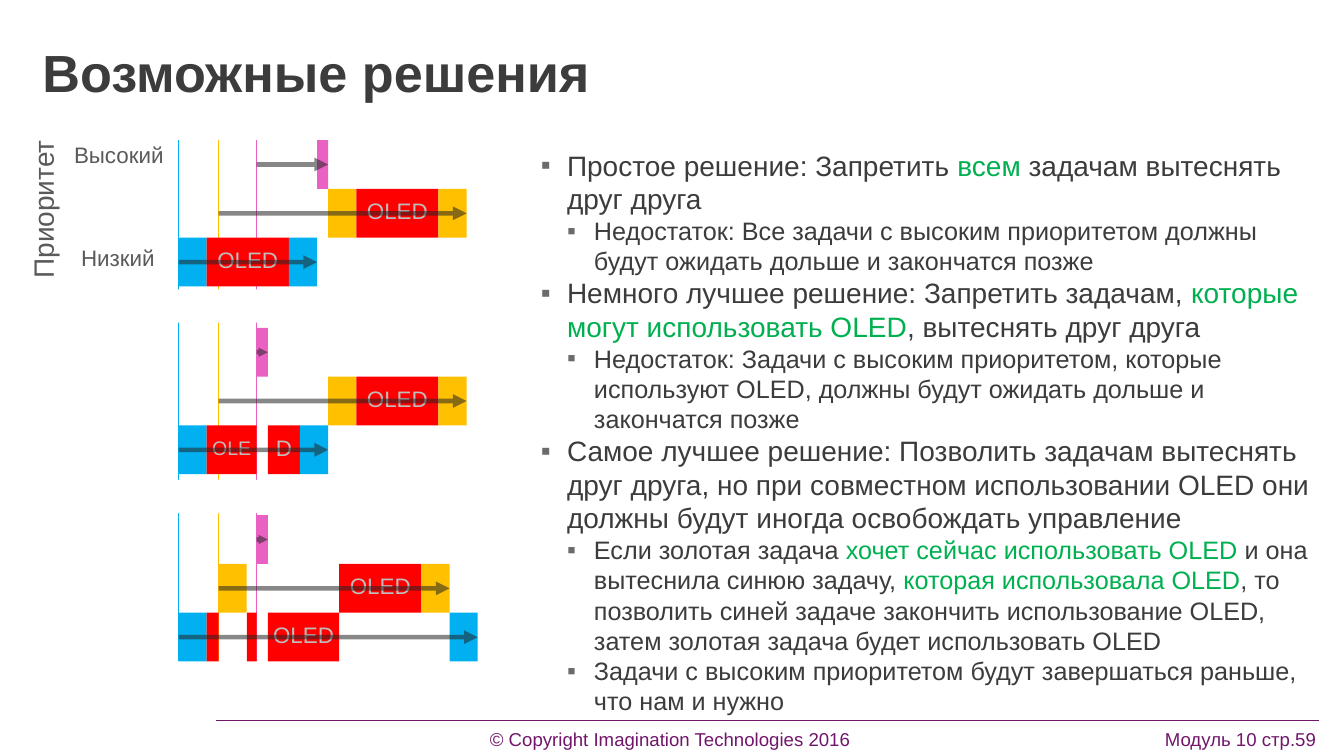
from lxml import etree
from pptx import Presentation
from pptx.dml.color import RGBColor
from pptx.enum.shapes import MSO_CONNECTOR, MSO_SHAPE
from pptx.enum.text import MSO_ANCHOR, PP_ALIGN
from pptx.oxml.ns import qn
from pptx.util import Cm, Pt

STRAIGHT = MSO_CONNECTOR.STRAIGHT
RECTANGLE = MSO_SHAPE.RECTANGLE
LEFT, CENTER = PP_ALIGN.LEFT, PP_ALIGN.CENTER
MIDDLE = MSO_ANCHOR.MIDDLE
LEFT_SIDE, RIGHT_SIDE = 1, 3

FONT = "Arial"
BLUE, GOLD, PINK, RED = "00B0F0", "FFC000", "E961C3", "FF0000"
DARK, GREY, GREEN, PURPLE, WHITE = "3C3C3C", "5A5A5A", "00B050", "72166B", "FFFFFF"

ROW = 1.23
ARRIVALS = {BLUE: 4.5, GOLD: 5.51, PINK: 6.47}
PRIORITIES = [PINK, GOLD, BLUE]
EDGE, OLED, SHORT = 0.71, 2.07, 0.28

# Each step is the running task, its duration, its fill and its label;
# one step starts where the step before it ends.
GOLD_RUN = [(GOLD, EDGE, GOLD, ""), (GOLD, OLED, RED, "OLED"), (GOLD, EDGE, GOLD, "")]
PINK_RUN = (PINK, SHORT, PINK, "")
BLUE_EDGE = (BLUE, EDGE, BLUE, "")
SCHEDULES = [
    (3.53, [BLUE_EDGE, (BLUE, OLED, RED, "OLED"), BLUE_EDGE, PINK_RUN, *GOLD_RUN]),
    (8.26, [BLUE_EDGE, (BLUE, 1.26, RED, "OLE"), PINK_RUN, (BLUE, 0.81, RED, "D"),
            BLUE_EDGE, *GOLD_RUN]),
    (12.98, [BLUE_EDGE, (BLUE, 0.3, RED, ""), GOLD_RUN[0], (BLUE, 0.25, RED, ""),
             PINK_RUN, (BLUE, 1.8, RED, "OLED"), *GOLD_RUN[1:], BLUE_EDGE]),
]

# Level and text; the parts between bars are green.
SOLUTIONS = [
    (0, "Простое решение: Запретить |всем| задачам вытеснять друг друга"),
    (1, "Недостаток: Все задачи с высоким приоритетом должны будут ожидать "
        "дольше и закончатся позже"),
    (0, "Немного лучшее решение: Запретить задачам,| которые могут использовать "
        "OLED|, вытеснять друг друга"),
    (1, "Недостаток: Задачи с высоким приоритетом, которые используют OLED, "
        "должны будут ожидать дольше и закончатся позже"),
    (0, "Самое лучшее решение: Позволить задачам вытеснять друг друга, но при "
        "совместном использовании OLED они должны будут иногда освобождать управление"),
    (1, "Если золотая задача| хочет сейчас использовать OLED| и она вытеснила синюю "
        "задачу, |которая использовала OLED|, то позволить синей задаче закончить "
        "использование OLED, затем золотая задача будет использовать OLED"),
    (1, "Задачи с высоким приоритетом будут завершаться раньше, что нам и нужно"),
]
LEVELS = [{"size": 20, "margin": 0.66, "hanging": 0.66},
          {"size": 18, "margin": 1.34, "hanging": 0.68}]


def rgb(value):
    return RGBColor.from_string(value)


def apply_format(target, values):
    for name, value in values.items():
        setattr(target, name, value)


def add_run(paragraph, text, size, color, bold=False):
    run = paragraph.add_run()
    run.text = text
    apply_format(run.font, {"name": FONT, "size": Pt(size), "bold": bold})
    run.font.color.rgb = rgb(color)


def add_text_box(slide, left, top, width, height, inset=(0, 0), wrap=True):
    box = slide.shapes.add_textbox(Cm(left), Cm(top), Cm(width), Cm(height))
    across, down = (Cm(value) for value in inset)
    apply_format(box.text_frame, {
        "margin_left": across, "margin_right": across,
        "margin_top": down, "margin_bottom": down, "word_wrap": wrap})
    return box


def add_line(slide, start, end, color, width):
    line = slide.shapes.add_connector(STRAIGHT, *(Cm(value) for value in (*start, *end)))
    line.line.color.rgb = rgb(color)
    line.line.width = Pt(width)
    etree.SubElement(line._element.spPr, qn("a:effectLst"))
    return line


def add_bar(slide, left, top, width, height, color, label=""):
    bar = slide.shapes.add_shape(RECTANGLE, Cm(left), Cm(top), Cm(width), Cm(height))
    bar.shadow.inherit = False
    bar.fill.solid()
    bar.fill.fore_color.rgb = rgb(color)
    bar.line.fill.background()
    if label:
        apply_format(bar.text_frame, {"margin_left": 0, "margin_right": 0,
                                      "vertical_anchor": MIDDLE})
        paragraph = bar.text_frame.paragraphs[0]
        apply_format(paragraph, {"alignment": CENTER, "line_spacing": 0.8})
        add_run(paragraph, label, 14 if label == "OLE" else 16, "BEBEBE")
    return bar


def add_schedule(slide, top, steps):
    """Draw the bars of one schedule and return them by task."""
    bars = {task: [] for task in PRIORITIES}
    time = ARRIVALS[BLUE]
    for task, duration, color, label in steps:
        row_top = top + ROW * PRIORITIES.index(task)
        bars[task].append(add_bar(slide, time, row_top, duration, ROW, color, label))
        time += duration
    return bars


def add_response_arrow(slide, task, bars):
    """Draw a translucent arrow from a task's arrival to its completion."""
    first, last = bars[0], bars[-1]
    middle = (first.top + first.height / 2) / Cm(1)
    arrival = ARRIVALS[task]
    finish = (last.left + last.width) / Cm(1)
    arrow = add_line(slide, (arrival, middle), (finish, middle), "262626", 3.25)
    arrow.end_connect(last, RIGHT_SIDE)
    arrow.begin_y = arrow.end_y
    if abs(first.left / Cm(1) - arrival) < 0.01:
        arrow.begin_connect(first, LEFT_SIDE)
    outline = arrow.line._get_or_add_ln()
    etree.SubElement(outline.find(".//" + qn("a:srgbClr")), qn("a:alpha"), val="54000")
    head_size = "sm" if finish - arrival < 0.5 else "med"
    etree.SubElement(outline, qn("a:tailEnd"), type="triangle", w=head_size, len=head_size)


def add_label(slide, left, top, width, height, text, size, alignment=CENTER, rotation=0):
    box = add_text_box(slide, left, top, width, height, inset=(0.23, 0.11))
    box.rotation = rotation
    paragraph = box.text_frame.paragraphs[0]
    paragraph.alignment = alignment
    add_run(paragraph, text, size, GREY)


def add_title(slide, text):
    box = add_text_box(slide, 1.07, 1.26, 32.2, 1.19, wrap=False)
    paragraph = box.text_frame.paragraphs[0]
    paragraph.line_spacing = 0.85
    add_run(paragraph, text, 37.3, DARK, bold=True)


def add_bullet(paragraph, margin, hanging):
    properties = paragraph._p.get_or_add_pPr()
    properties.set("marL", str(Cm(margin)))
    properties.set("indent", str(-Cm(hanging)))
    color = etree.SubElement(properties, qn("a:buClr"))
    etree.SubElement(color, qn("a:srgbClr"), val="6B6B6B")
    etree.SubElement(properties, qn("a:buFont"), typeface=FONT)
    etree.SubElement(properties, qn("a:buChar"), char="▪")


def add_solutions(slide):
    frame = add_text_box(slide, 13.63, 3.73, 19.46, 14.4).text_frame
    for index, (level, text) in enumerate(SOLUTIONS):
        paragraph = frame.add_paragraph() if index else frame.paragraphs[0]
        style = LEVELS[level]
        add_bullet(paragraph, style["margin"], style["hanging"])
        apply_format(paragraph, {"level": level, "line_spacing": 1.0})
        for part, words in enumerate(text.split("|")):
            add_run(paragraph, words, style["size"], GREEN if part % 2 else DARK)


def add_footer(slide, center_text, right_text):
    add_line(slide, (5.44, 18.16), (33.25, 18.16), PURPLE, 0.5)
    box = add_text_box(slide, 0.61, 18.4, 32.66, 0.51)
    paragraph = box.text_frame.paragraphs[0]
    tabs = etree.SubElement(paragraph._p.get_or_add_pPr(), qn("a:tabLst"))
    for position, alignment in ((16.28, "ctr"), (32.56, "r")):
        etree.SubElement(tabs, qn("a:tab"), pos=str(Cm(position)), algn=alignment)
    paragraph.line_spacing = 0.9
    add_run(paragraph, f"\t{center_text}\t{right_text}", 13.3, PURPLE)


def main():
    presentation = Presentation()
    presentation.slide_width, presentation.slide_height = Cm(33.87), Cm(19.05)
    slide = presentation.slides.add_slide(presentation.slide_layouts[6])

    add_footer(slide, "© Copyright Imagination Technologies 2016", "Модуль 10 стр.59")
    add_title(slide, "Возможные решения")
    add_solutions(slide)

    for color, arrival in ARRIVALS.items():
        add_line(slide, (arrival, 16.66), (arrival, 3.53), color, 1)
    schedules = [add_schedule(slide, top, steps) for top, steps in SCHEDULES]
    for gap_top in (7.29, 12.09):
        add_bar(slide, 4.3, gap_top, 3.81, 0.84, WHITE)
    for bars in schedules:
        for task in PRIORITIES:
            add_response_arrow(slide, task, bars[task])

    add_label(slide, -0.97, 4.67, 4.09, 1.07, "Приоритет", 20, LEFT, rotation=270)
    add_label(slide, 1.6, 6.05, 2.74, 0.91, "Низкий", 16)
    add_label(slide, 1.6, 3.45, 2.79, 0.91, "Высокий", 16)
    presentation.save("out.pptx")


if __name__ == "__main__":
    main()
